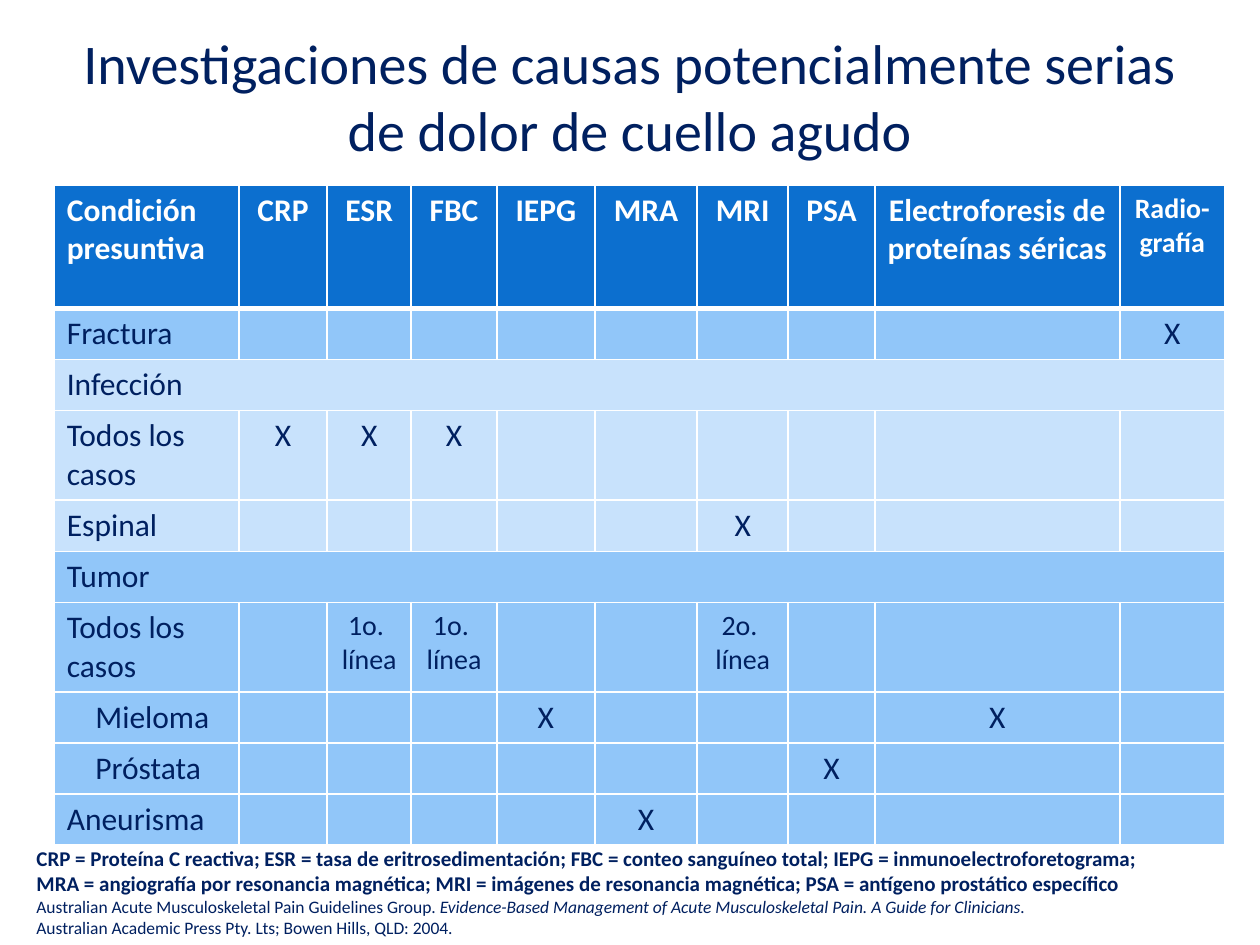
from dataclasses import dataclass

from lxml import etree
from pptx import Presentation
from pptx.dml.color import RGBColor
from pptx.enum.text import MSO_ANCHOR, MSO_AUTO_SIZE, PP_ALIGN
from pptx.oxml.ns import qn
from pptx.util import Pt

LEFT, CENTER = PP_ALIGN.LEFT, PP_ALIGN.CENTER
TOP, MIDDLE = MSO_ANCHOR.TOP, MSO_ANCHOR.MIDDLE
NO_FIT = MSO_AUTO_SIZE.NONE


@dataclass(frozen=True)
class Theme:
    font: str = "Calibri"
    ink: str = "002060"
    white: str = "FFFFFF"
    head: str = "0C6FCF"
    mid: str = "91C6F9"
    pale: str = "C8E2FC"
    title: int = 32
    body: int = 18
    small: int = 16
    key: int = 12
    cite: int = 10


THEME = Theme()

TITLE = "Investigaciones de causas potencialmente serias de dolor de cuello agudo"
HEADS = ["Condición presuntiva", "CRP", "ESR", "FBC", "IEPG", "MRA", "MRI", "PSA",
         "Electroforesis de proteínas séricas", "Radio-grafía"]
WIDTHS = [105.5, 50.5, 48, 49, 56, 58.5, 52, 49.5, 140, 60]
HEAD_H, ROW_H, TALL_H = 70.5, 28, 50
INDENT = 16.3

FIRST, SECOND = "1o. \vlínea", "2o. \vlínea"
ROWS = [
    ("Fractura", THEME.mid, {"Radio-grafía": "X"}),
    ("Infección", THEME.pale, None),
    ("Todos los casos", THEME.pale, {"CRP": "X", "ESR": "X", "FBC": "X"}),
    ("Espinal", THEME.pale, {"MRI": "X"}),
    ("Tumor", THEME.mid, None),
    ("Todos los casos", THEME.mid, {"ESR": FIRST, "FBC": FIRST, "MRI": SECOND}),
    ("Mieloma", THEME.mid, {"IEPG": "X", HEADS[8]: "X"}),
    ("Próstata", THEME.mid, {"PSA": "X"}),
    ("Aneurisma", THEME.mid, {"MRA": "X"}),
]
NESTED = ("Mieloma", "Próstata")

KEY = ("CRP = Proteína C reactiva; ESR = tasa de eritrosedimentación; "
       "FBC = conteo sanguíneo total; IEPG = inmunoelectroforetograma; \v"
       "MRA = angiografía por resonancia magnética; MRI = imágenes de resonancia "
       "magnética; PSA = antígeno prostático específico")
CITE = [
    ("Australian Acute Musculoskeletal Pain Guidelines Group. ", False),
    ("Evidence-Based Management of Acute Musculoskeletal Pain. "
     "A Guide for Clinicians. ", True),
    ("Australian Academic Press Pty. Lts; Bowen Hills, QLD: 2004.", False),
]


def style(para, size, color=THEME.ink, bold=False, align=LEFT):
    para.alignment = align
    font = para.font
    font.name, font.size, font.bold = THEME.font, Pt(size), bold
    font.color.rgb = RGBColor.from_string(color)


def edge(cell, base):
    props = cell._tc.get_or_add_tcPr()
    for side, width in (("lnL", 1), ("lnR", 1), ("lnT", 1), ("lnB", base)):
        line = etree.SubElement(props, qn(f"a:{side}"), w=str(Pt(width)))
        fill = etree.SubElement(line, qn("a:solidFill"))
        etree.SubElement(fill, qn("a:srgbClr"), val=THEME.white)


def paint(cell, fill, base=1):
    edge(cell, base)
    cell.fill.solid()
    cell.fill.fore_color.rgb = RGBColor.from_string(fill)


def write(cell, text, size, color=THEME.ink, bold=False, align=LEFT):
    para = cell.text_frame.paragraphs[0]
    para.text = text.replace("\v", "\n")
    style(para, size, color, bold, align)
    return para


def add_title(slide, x, y, w, h):
    shape = slide.shapes.title
    shape.left, shape.top, shape.width, shape.height = Pt(x), Pt(y), Pt(w), Pt(h)
    frame = shape.text_frame
    frame.text = TITLE
    frame.auto_size, frame.vertical_anchor = NO_FIT, MIDDLE
    style(frame.paragraphs[0], THEME.title, align=CENTER)


def add_grid(slide, x, y):
    highs = [HEAD_H] + [TALL_H if name == "Todos los casos" else ROW_H
                        for name, _, _ in ROWS]
    table = slide.shapes.add_table(len(highs), len(WIDTHS), Pt(x), Pt(y),
                                   Pt(sum(WIDTHS)), Pt(sum(highs))).table
    table.first_row = table.horz_banding = False
    for col, width in zip(table.columns, WIDTHS):
        col.width = Pt(width)
    for row, high in zip(table.rows, highs):
        row.height = Pt(high)

    for i, head in enumerate(HEADS):
        cell = table.cell(0, i)
        paint(cell, THEME.head, 3)
        size = THEME.small if i == len(HEADS) - 1 else THEME.body
        write(cell, head, size, THEME.white, True, CENTER if i else LEFT)

    for r, (name, fill, marks) in enumerate(ROWS, 1):
        for c in range(len(HEADS)):
            paint(table.cell(r, c), fill)
        first = table.cell(r, 0)
        if marks is None:
            first.merge(table.cell(r, len(HEADS) - 1))
        para = write(first, name, THEME.body)
        if name in NESTED:
            para._p.get_or_add_pPr().set("marL", str(Pt(INDENT)))
        for head, mark in (marks or {}).items():
            size = THEME.body if mark == "X" else THEME.small
            write(table.cell(r, HEADS.index(head)), mark, size, align=CENTER)
        first.vertical_anchor = MIDDLE if marks and FIRST in marks.values() else TOP


def add_notes(slide, x, y, w, h):
    frame = slide.shapes.add_textbox(Pt(x), Pt(y), Pt(w), Pt(h)).text_frame
    frame.word_wrap = True
    key = frame.paragraphs[0]
    key.text = KEY
    style(key, THEME.key, bold=True)
    cite = frame.add_paragraph()
    for text, slant in CITE:
        run = cite.add_run()
        run.text, run.font.italic = text, slant
        if slant:
            cite.add_line_break()
    style(cite, THEME.cite)


def main():
    deck = Presentation()
    deck.slide_width, deck.slide_height = Pt(720), Pt(540)
    slide = deck.slides.add_slide(deck.slide_layouts[5])
    add_title(slide, 36, 9.5, 648, 90)
    add_grid(slide, 31, 105.75)
    add_notes(slide, 13.75, 479.5, 692, 60.5)
    deck.save("out.pptx")


if __name__ == "__main__":
    main()
